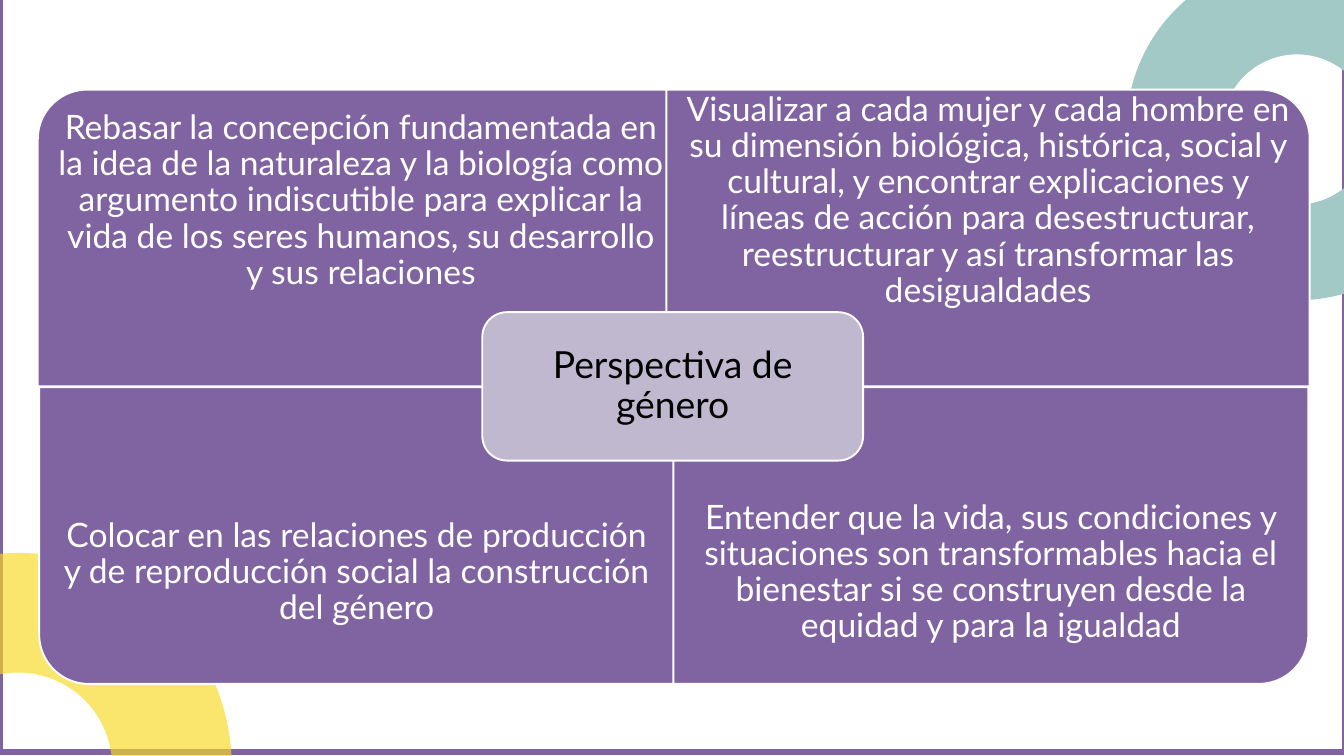
import lxml.etree
import pptx
import pptx.dml.color
import pptx.enum.shapes
import pptx.enum.text
import pptx.oxml.ns
import pptx.util

RGBColor = pptx.dml.color.RGBColor
Shape = pptx.enum.shapes.MSO_SHAPE

PX = 9525
WHITE = RGBColor(0xFF, 0xFF, 0xFF)
BLACK = RGBColor(0x00, 0x00, 0x00)
PURPLE = RGBColor(0x80, 0x64, 0xA2)
LILAC = RGBColor(0xC0, 0xB8, 0xCE)
TEAL = RGBColor(0xA2, 0xC9, 0xC5)
YELLOW = RGBColor(0xF9, 0xD9, 0x1F)

RING_THICKNESS = 0.28
QUADRANT_TEXT_HEIGHT = 318

QUADRANTS = [
    ((54, 128, 923, 424), 270,
     "Rebasar la concepción fundamentada en la idea de la naturaleza y la biología como "
     "argumento indiscutible para explicar la vida de los seres humanos, su desarrollo "
     "y sus relaciones"),
    ((952, 128, 919, 424), 0,
     "Visualizar a cada mujer y cada hombre en su dimensión biológica, histórica, social y "
     "cultural, y encontrar explicaciones y líneas de acción para desestructurar, "
     "reestructurar y así transformar las desigualdades"),
    ((56, 553, 907, 424), 180,
     "Colocar en las relaciones de producción y de reproducción social la construcción "
     "del género"),
    ((962, 553, 907, 424), 90,
     "Entender que la vida, sus condiciones y situaciones son transformables hacia el "
     "bienestar si se construyen desde la equidad y para la igualdad"),
]


def add_figure(slide, kind, box, fill, line=None, line_width=2, rotation=0):
    left, top, width, height = box
    if rotation in (90, 270):
        left += (width - height) / 2
        top -= (width - height) / 2
        width, height = height, width
    figure = slide.shapes.add_shape(kind, *(round(n * PX) for n in (left, top, width, height)))
    figure.rotation = rotation
    figure.shadow.inherit = False
    figure.fill.solid()
    figure.fill.fore_color.rgb = fill
    if line is None:
        figure.line.fill.background()
    else:
        figure.line.color.rgb = line
        figure.line.width = pptx.util.Pt(line_width)
    return figure


def add_text(slide, box, text, size=36, color=WHITE, inset=27):
    frame = slide.shapes.add_textbox(*(n * PX for n in box)).text_frame
    frame.word_wrap = True
    frame.vertical_anchor = pptx.enum.text.MSO_ANCHOR.MIDDLE
    frame.margin_left = frame.margin_right = inset * PX
    frame.margin_top = frame.margin_bottom = inset * PX
    paragraph = frame.paragraphs[0]
    paragraph.alignment = pptx.enum.text.PP_ALIGN.CENTER
    paragraph.line_spacing = 0.9
    run = paragraph.add_run()
    run.text = text
    run.font.name = "Lato"
    run.font.size = pptx.util.Pt(size)
    run.font.color.rgb = color


def add_ring(slide, box, color, opacity=100):
    ring = add_figure(slide, Shape.DONUT, box, color)
    ring.adjustments[0] = RING_THICKNESS
    if opacity < 100:
        tint = ring.fill._xPr.find(".//" + pptx.oxml.ns.qn("a:srgbClr"))
        alpha = lxml.etree.SubElement(tint, pptx.oxml.ns.qn("a:alpha"))
        alpha.set("val", str(opacity * 1000))


def add_backdrop(slide, box):
    left, top, width, height = box
    add_figure(slide, Shape.RECTANGLE, box, WHITE, PURPLE, 6)
    add_ring(slide, (left + 1608, top - 53, 488, 488), TEAL)
    add_ring(slide, (left - 280, top + 796, 610, 610), YELLOW, 65)


def add_quadrant(slide, box, rotation, text):
    left, top, width, height = box
    add_figure(slide, Shape.ROUND_1_RECTANGLE, box, PURPLE, WHITE, rotation=rotation)
    at_bottom = rotation in (90, 180)
    text_top = top + height - QUADRANT_TEXT_HEIGHT if at_bottom else top
    add_text(slide, (left, text_top, width, QUADRANT_TEXT_HEIGHT), text)


def add_core(slide, box, text):
    left, top, width, height = box
    add_figure(slide, Shape.ROUNDED_RECTANGLE, box, LILAC, WHITE)
    add_text(slide, (left + 10, top + 10, width - 20, height - 20), text,
             size=40, color=BLACK, inset=16)


def main():
    deck = pptx.Presentation()
    deck.slide_width = 1920 * PX
    deck.slide_height = 1080 * PX
    slide = deck.slides.add_slide(deck.slide_layouts[6])
    add_backdrop(slide, (1, -6, 1920, 1080))
    for box, rotation, text in QUADRANTS:
        add_quadrant(slide, box, rotation, text)
    add_core(slide, (689, 446, 544, 212), "Perspectiva de género")
    deck.save("out.pptx")


if __name__ == "__main__":
    main()
